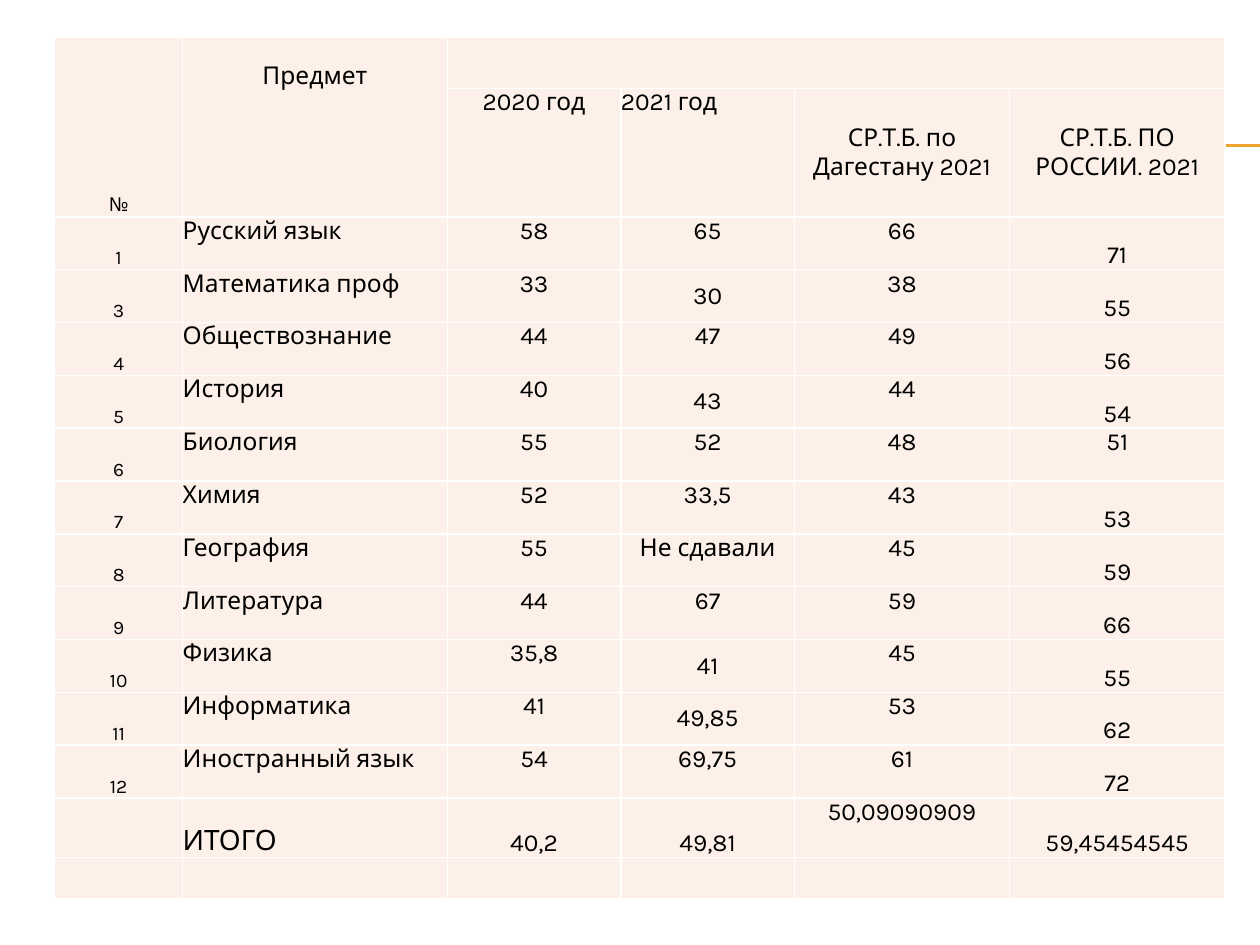
"""Build a slide with a table of average exam scores by subject."""
from lxml import etree
from pptx import Presentation
from pptx.dml.color import RGBColor
from pptx.enum.shapes import MSO_CONNECTOR
from pptx.enum.text import MSO_ANCHOR, PP_ALIGN
from pptx.oxml import parse_xml
from pptx.oxml.ns import nsdecls, qn
from pptx.util import Pt

TOP, MIDDLE, BOTTOM = MSO_ANCHOR.TOP, MSO_ANCHOR.MIDDLE, MSO_ANCHOR.BOTTOM
LEFT, CENTER = PP_ALIGN.LEFT, PP_ALIGN.CENTER
STRAIGHT = MSO_CONNECTOR.STRAIGHT
PEACH = RGBColor(0xFC, 0xF0, 0xE8)
BLACK = RGBColor(0, 0, 0)
ORANGE = RGBColor(0xF0, 0xA2, 0x2E)
WHITE = RGBColor(0xFF, 0xFF, 0xFF)
FONT = "Karla"

SCORES = [
    ("№", "Предмет", "", "", "", ""),
    ("", "", "2020 год", "2021 год", "СР.Т.Б. по Дагестану 2021", "СР.Т.Б. ПО РОССИИ. 2021"),
    ("1", "Русский язык", "58", "65", "66", "71"),
    ("3", "Математика проф", "33", "30", "38", "55"),
    ("4", "Обществознание", "44", "47", "49", "56"),
    ("5", "История", "40", "43", "44", "54"),
    ("6", "Биология", "55", "52", "48", "51"),
    ("7", "Химия", "52", "33,5", "43", "53"),
    ("8", "География", "55", "Не сдавали", "45", "59"),
    ("9", "Литература", "44", "67", "59", "66"),
    ("10", "Физика", "35,8", "41", "45", "55"),
    ("11", "Информатика", "41", "49,85", "53", "62"),
    ("12", "Иностранный язык", "54", "69,75", "61", "72"),
    ("", "ИТОГО", "40,2", "49,81", "50,09090909", "59,45454545"),
    ("", "", "", "", "", ""),
]
COLUMN_WIDTHS = [73.2, 151.2, 99.2, 99.2, 123, 123]
ROW_HEIGHTS = [29.5, 73.4] + [30.2] * 11 + [34.2, 23.4]
HEADER, TOTAL = 1, 13
COLUMN_ANCHORS = [BOTTOM, TOP, TOP, TOP, TOP, BOTTOM]
ANCHORS = {(row, 3): MIDDLE for row in (3, 5, 10, 11)}
ANCHORS.update({(HEADER, column): MIDDLE for column in (4, 5)})
ANCHORS.update({(TOTAL, column): BOTTOM for column in (1, 2, 3)})
ANCHORS[6, 5] = TOP


def add_borders(cell):
    properties = cell._tc.get_or_add_tcPr()
    for side in ("lnL", "lnR", "lnT", "lnB"):
        properties.append(parse_xml(
            f'<a:{side} {nsdecls("a")} w="{Pt(1)}"><a:solidFill>'
            f'<a:srgbClr val="{WHITE}"/></a:solidFill></a:{side}>'))


presentation = Presentation()
presentation.slide_width, presentation.slide_height = Pt(720), Pt(540)
slide = presentation.slides.add_slide(presentation.slide_layouts[6])

for rule_y in (82.8, 83.5):
    rule = slide.shapes.add_connector(STRAIGHT, Pt(40.3), Pt(rule_y), Pt(720), Pt(rule_y))
    rule.line.color.rgb = ORANGE
    rule.line.width = Pt(0.75)
    etree.SubElement(rule._element.spPr, qn("a:effectLst"))

scores_table = slide.shapes.add_table(
    len(SCORES), len(COLUMN_WIDTHS), Pt(31.2), Pt(21),
    Pt(sum(COLUMN_WIDTHS)), Pt(sum(ROW_HEIGHTS))).table
for column, width in zip(scores_table.columns, COLUMN_WIDTHS):
    column.width = Pt(width)
for row, height in zip(scores_table.rows, ROW_HEIGHTS):
    row.height = Pt(height)

for row_index, entries in enumerate(SCORES):
    for column_index, entry in enumerate(entries):
        cell = scores_table.cell(row_index, column_index)
        add_borders(cell)
        cell.fill.solid()
        cell.fill.fore_color.rgb = PEACH
        cell.margin_left = cell.margin_right = cell.margin_top = cell.margin_bottom = 0
        cell.vertical_anchor = ANCHORS.get((row_index, column_index), COLUMN_ANCHORS[column_index])
        if not entry:
            continue
        cell.text_frame.text = entry
        paragraph = cell.text_frame.paragraphs[0]
        is_left = (column_index == 1 and row_index > HEADER) or entry == "2021 год"
        paragraph.alignment = LEFT if is_left else CENTER
        font = paragraph.runs[0].font
        font.name = FONT
        font.size = Pt(11 if column_index == 0 else 16 if entry == "ИТОГО" else 14)
        font.bold = False
        font.color.rgb = BLACK

scores_table.cell(0, 1).margin_top = Pt(14.3)
for column_index in (0, 1):
    scores_table.cell(0, column_index).merge(scores_table.cell(HEADER, column_index))
scores_table.cell(0, 2).merge(scores_table.cell(0, 5))

presentation.save("out.pptx")
